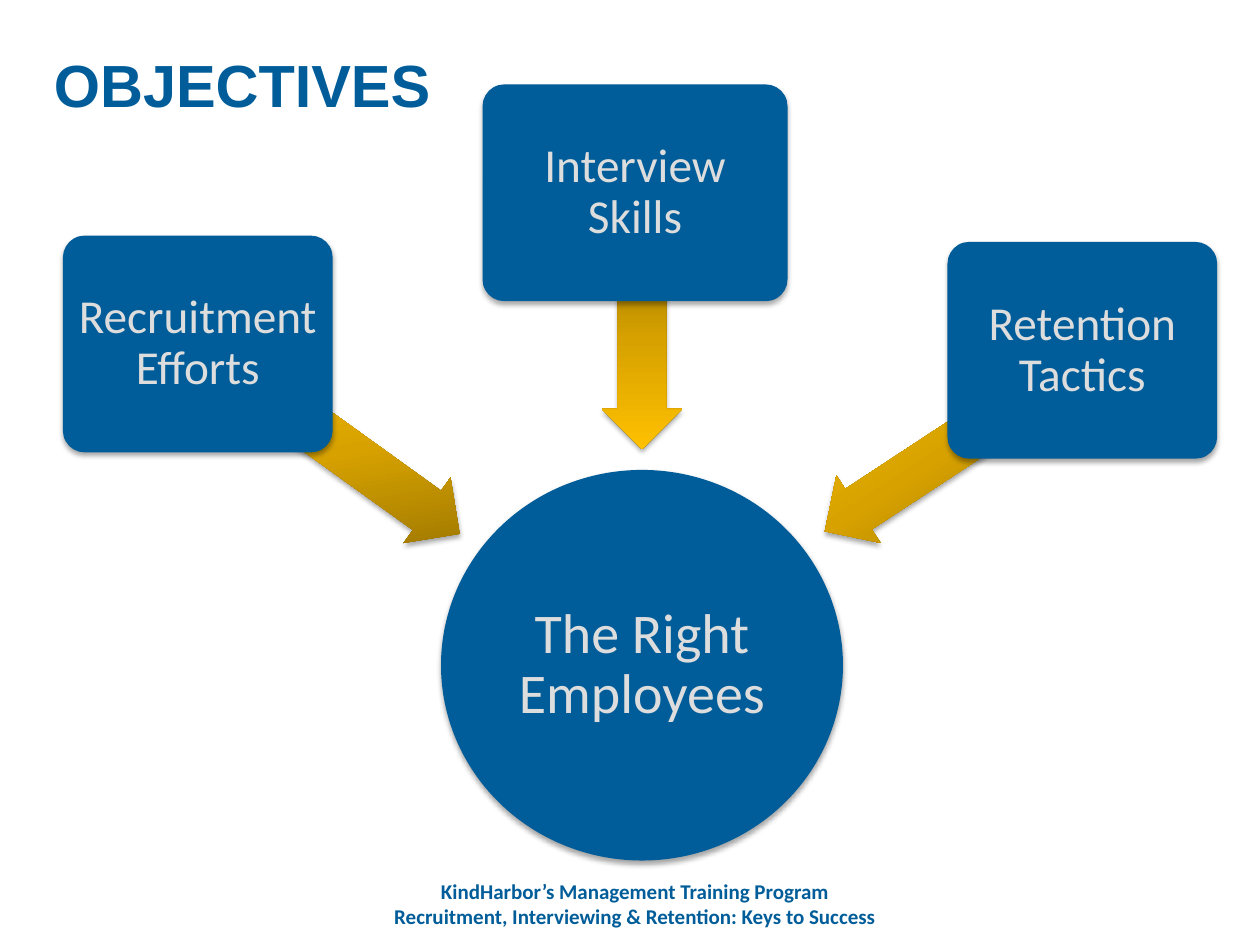
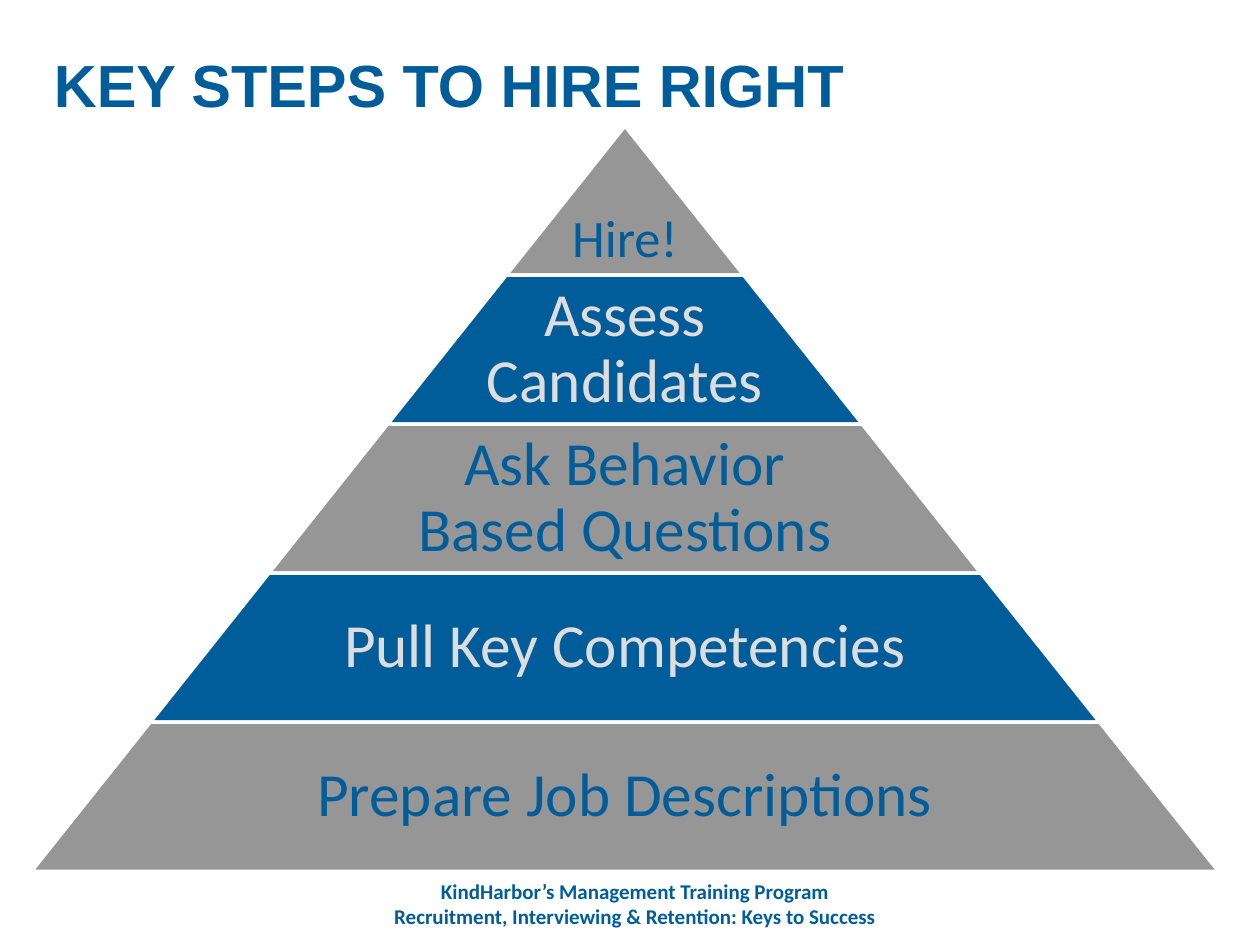
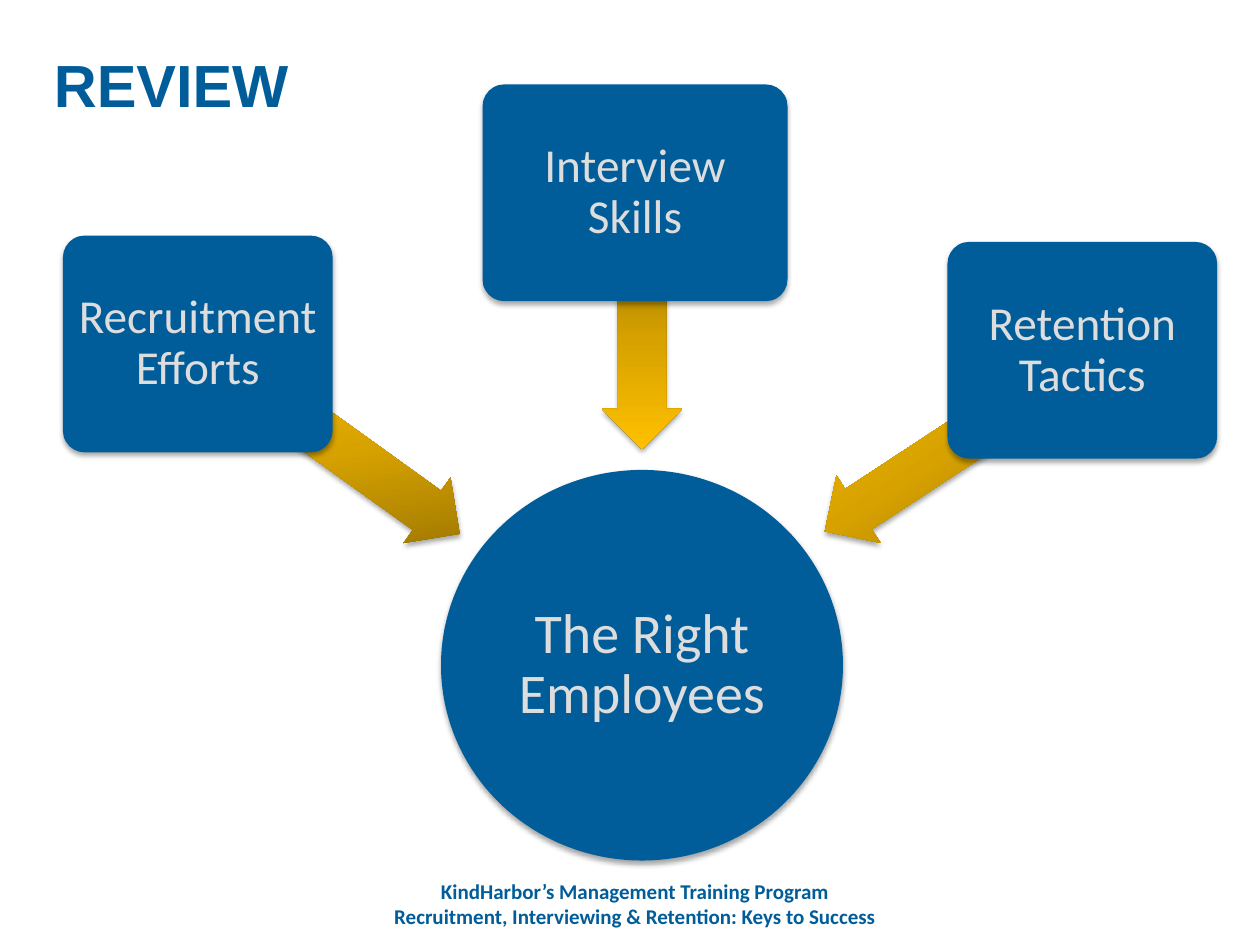
from copy import deepcopy
from dataclasses import dataclass

from lxml.etree import SubElement
from pptx import Presentation
from pptx.dml.color import RGBColor
from pptx.enum.shapes import MSO_SHAPE
from pptx.enum.text import MSO_ANCHOR, PP_ALIGN
from pptx.oxml.ns import qn
from pptx.util import Inches, Pt

BLUE = RGBColor(0x00, 0x5D, 0x99)
GREY = RGBColor(0x96, 0x96, 0x96)
LIGHT = RGBColor(0xDD, 0xDD, 0xDD)
WHITE = RGBColor(0xFF, 0xFF, 0xFF)
GOLD_STOPS = [
    RGBColor(0x97, 0x72, 0x00),
    RGBColor(0xD7, 0xA2, 0x00),
    RGBColor(0xFF, 0xC0, 0x00),
]
CELL = Inches(0.5)
COLUMNS, ROWS = 20, 15
FOOTER_LINES = [
    "KindHarbor’s Management Training Program",
    "Recruitment, Interviewing & Retention: Keys to Success",
]
EFFORTS = [
    ("Recruitment Efforts", (0, 2.4, 4.28, 3.44), (2.22, 5.18, 4.5, 1.28), 215.7, 45),
    ("Interview Skills", (6.66, 0, 4.84, 3.44), (7.46, 3.42, 3.46, 1.28), 270, 180),
    ("Retention Tactics", (14.04, 2.5, 4.28, 3.44), (11.76, 5.34, 4.06, 1.28), 326.7, 270),
]
STEPS = [
    "Hire!",
    "Assess Candidates",
    "Ask Behavior Based Questions",
    "Pull Key Competencies",
    "Prepare Job Descriptions",
]


@dataclass
class Box:
    """A rectangle measured in grid columns and rows."""

    left: float
    top: float
    width: float
    height: float

    def inner(self, left, top, width, height):
        """Return a box placed from this box's top left corner."""
        return Box(self.left + left, self.top + top, width, height)

    def lengths(self):
        """Return left, top, width and height as slide lengths."""
        return [round(cells * CELL) for cells in (self.left, self.top, self.width, self.height)]


TITLE_BOX = Box(0.66, 0.5, 18, 1.5)
FOOTER_BOX = Box(5.66, 13.94, 8.84, 0.8)
DIAGRAM_BOX = Box(1, 1.34, 18.34, 12.32)
PYRAMID_BOX = Box(0.5, 2, 18.84, 11.83)


def write(shape, lines, size, color, font="Calibri", bold=False, align=PP_ALIGN.CENTER,
          anchor=MSO_ANCHOR.MIDDLE, spacing=0.9, margins=(0.1, 0.05)):
    """Fill a shape with evenly formatted paragraphs."""
    frame = shape.text_frame
    frame.text = "\n".join(lines)
    frame.word_wrap = True
    frame.vertical_anchor = anchor
    frame.margin_left = frame.margin_right = Inches(margins[0])
    frame.margin_top = frame.margin_bottom = Inches(margins[1])
    for paragraph in frame.paragraphs:
        paragraph.alignment = align
        paragraph.line_spacing = spacing
        for run in paragraph.runs:
            run.font.name = font
            run.font.size = Pt(size)
            run.font.bold = bold
            run.font.color.rgb = color


def add_shadowed(slide, kind, box):
    """Add a blue shape without outline that casts a soft shadow downwards."""
    shape = slide.shapes.add_shape(kind, *box.lengths())
    shape.fill.solid()
    shape.fill.fore_color.rgb = BLUE
    shape.line.fill.background()
    shape.shadow.inherit = False
    effects = shape.element.spPr.find(qn("a:effectLst"))
    shadow = SubElement(effects, qn("a:outerShdw"), blurRad=str(Pt(3.1)), dist=str(Pt(1.8)),
                        dir="5400000", rotWithShape="0")
    color = SubElement(shadow, qn("a:srgbClr"), val="000000")
    SubElement(color, qn("a:alpha"), val="35000")
    return shape


def add_gold_arrow(slide, box, rotation, gradient_angle):
    """Add a rotated arrow with a gold gradient."""
    arrow = add_shadowed(slide, MSO_SHAPE.LEFT_ARROW, box)
    arrow.rotation = rotation
    arrow.adjustments[0], arrow.adjustments[1] = 0.6, 0.5
    arrow.fill.gradient()
    arrow.fill.gradient_angle = 360 - gradient_angle
    stop_list = arrow.element.spPr.find(qn("a:gradFill")).find(qn("a:gsLst"))
    stop_list.append(deepcopy(stop_list[0]))
    for index, stop in enumerate(arrow.fill.gradient_stops):
        stop.position = index / 2
        stop.color.rgb = GOLD_STOPS[index]


def add_diagram(slide, box):
    """Draw three efforts whose arrows lead to the circle of employees."""
    circle = add_shadowed(slide, MSO_SHAPE.OVAL, box.inner(6, 6.12, 6.38, 6.2))
    write(circle, ["The Right Employees"], 32, LIGHT, margins=(0, 0))
    for label, card_place, arrow_place, rotation, gradient_angle in EFFORTS:
        add_gold_arrow(slide, box.inner(*arrow_place), rotation, gradient_angle)
        card = add_shadowed(slide, MSO_SHAPE.ROUNDED_RECTANGLE, box.inner(*card_place))
        card.adjustments[0] = 0.1
        write(card, [label], 27, LIGHT, margins=(0.05, 0.05))


def add_pyramid(slide, box):
    """Draw the hiring steps as equal layers of a pyramid."""
    left, top, width, height = box.lengths()
    center = left + width / 2
    for index, label in enumerate(STEPS):
        upper, lower = index / len(STEPS), (index + 1) / len(STEPS)
        corners = [
            (round(center + side * width * share / 2), round(top + height * share))
            for side, share in [(-1, lower), (-1, upper), (1, upper), (1, lower)]
        ]
        builder = slide.shapes.build_freeform(*corners[0])
        builder.add_line_segments(corners[1:], close=True)
        layer = builder.convert_to_shape()
        layer.shadow.inherit = False
        layer.fill.solid()
        layer.fill.fore_color.rgb = BLUE if index % 2 else GREY
        layer.line.color.rgb = WHITE
        layer.line.width = Pt(2)
        write(layer, [label], 35 if index else 30, LIGHT if index % 2 else BLUE,
              anchor=MSO_ANCHOR.MIDDLE if index else MSO_ANCHOR.BOTTOM,
              margins=(0.18 * layer.width / Inches(1), 0.05))


def add_text(slide, box, lines, size, **style):
    """Add a bold blue text box."""
    text_box = slide.shapes.add_textbox(*box.lengths())
    write(text_box, lines, size, BLUE, bold=True, spacing=1, **style)


def add_page(presentation, title, draw_content, content_box):
    """Add a slide with its content, the shared footer and the title."""
    slide = presentation.slides.add_slide(presentation.slide_layouts[6])
    draw_content(slide, content_box)
    add_text(slide, FOOTER_BOX, FOOTER_LINES, 12)
    add_text(slide, TITLE_BOX, [title], 34, font="Arial", align=PP_ALIGN.LEFT,
             anchor=MSO_ANCHOR.BOTTOM)


def main():
    """Build and save the presentation."""
    presentation = Presentation()
    presentation.slide_width = COLUMNS * CELL
    presentation.slide_height = ROWS * CELL
    add_page(presentation, "OBJECTIVES", add_diagram, DIAGRAM_BOX)
    add_page(presentation, "KEY STEPS TO HIRE RIGHT", add_pyramid, PYRAMID_BOX)
    add_page(presentation, "REVIEW", add_diagram, DIAGRAM_BOX)
    presentation.save("out.pptx")


if __name__ == "__main__":
    main()
